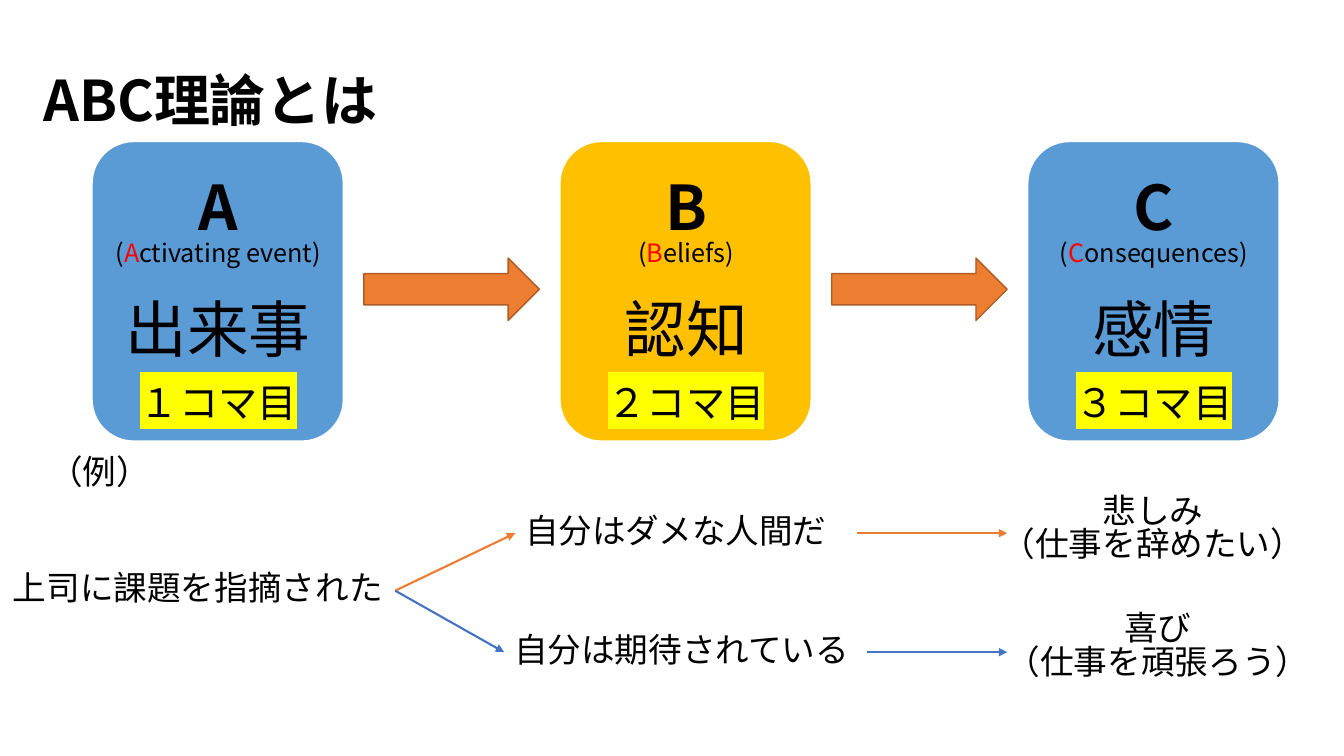
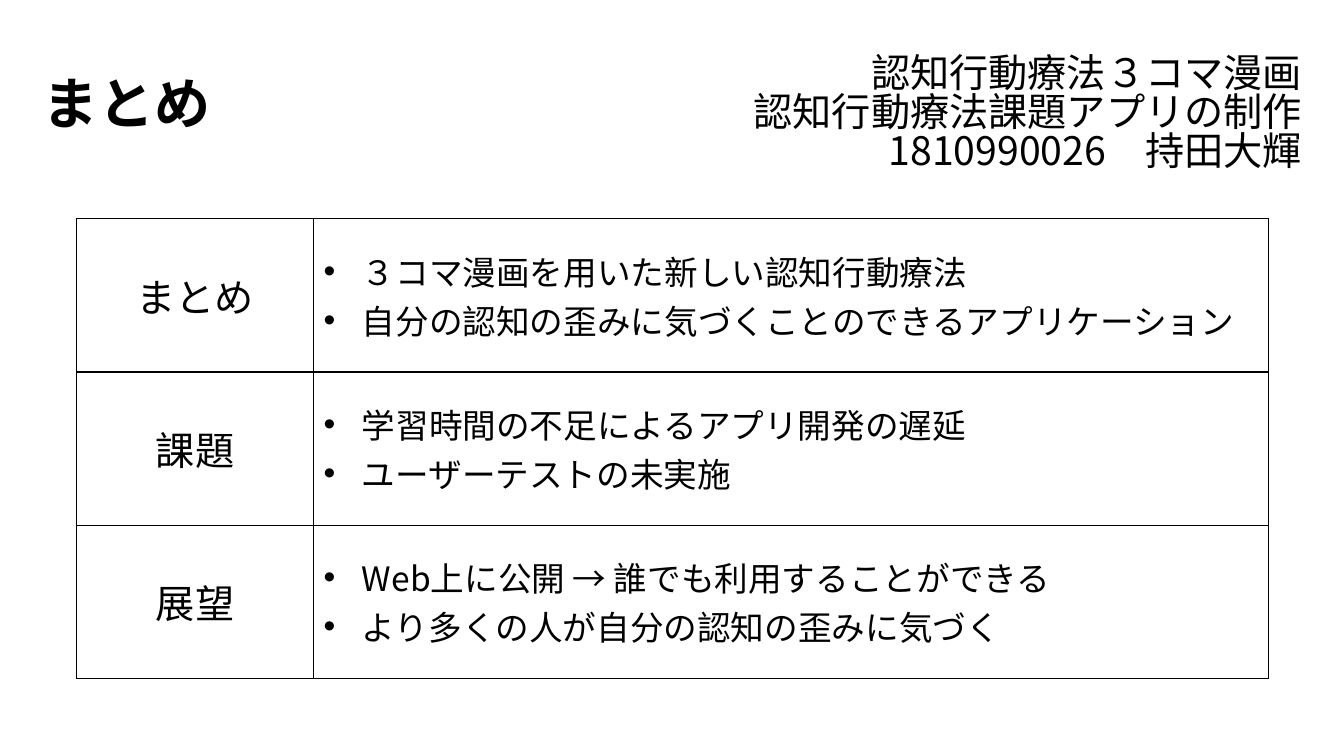
from lxml import etree
from pptx import Presentation
from pptx.dml.color import RGBColor
from pptx.enum.shapes import MSO_CONNECTOR, MSO_SHAPE
from pptx.enum.text import MSO_ANCHOR, PP_ALIGN
from pptx.oxml.ns import qn
from pptx.util import Inches, Pt

LEFT, CENTER, RIGHT = PP_ALIGN.LEFT, PP_ALIGN.CENTER, PP_ALIGN.RIGHT
MIDDLE = MSO_ANCHOR.MIDDLE
STRAIGHT = MSO_CONNECTOR.STRAIGHT
ROUND_RECT, ARROW = MSO_SHAPE.ROUNDED_RECTANGLE, MSO_SHAPE.RIGHT_ARROW
FONT = "Noto Sans CJK JP"
BLACK, WHITE, RED, YELLOW = "000000", "FFFFFF", "FF0000", "FFFF00"
ORANGE, DARK_ORANGE, BLUE = "ED7D31", "AF5C24", "4472C4"
LIGHT_BLUE, GOLD = "5B9BD5", "FFC000"
TITLE_SIZE, LARGE, MEDIUM, BODY, SMALL = 40, 44, 28, 24, 18
LINE_SPACING = 0.83
FIRST_LINE_DROP = 0.1


def rgb(value):
    """Turn a hex string into a colour."""
    return RGBColor.from_string(value)


def add_node(parent, tag, **attrs):
    """Append one drawing element."""
    return etree.SubElement(parent, qn(tag), {k: str(v) for k, v in attrs.items()})


class Deck:
    """Hold the shared style and the slide being built."""

    def __init__(self):
        """Start a wide presentation."""
        self.prs = Presentation()
        self.prs.slide_width, self.prs.slide_height = Inches(13.33), Inches(7.5)
        self.s = None

    def slide(self, title, left, top):
        """Add a slide with its title."""
        self.s = self.prs.slides.add_slide(self.prs.slide_layouts[5])
        sp = self.s.shapes.title
        self.place(sp, left, top, 11.5, 1.45)
        tf = sp.text_frame
        tf.word_wrap, tf.vertical_anchor = True, MIDDLE
        self.fill_text(tf, [[(title, {"size": TITLE_SIZE, "bold": True})]], LEFT,
                       LINE_SPACING)

    def place(self, sp, left, top, width, height):
        """Set the position and size of a shape."""
        box = {"left": left, "top": top, "width": width, "height": height}
        for name, value in box.items():
            setattr(sp, name, Inches(value))

    def add_run(self, p, text, color=BLACK, highlight=None, **formats):
        """Add a formatted run to a paragraph."""
        r = p.add_run()
        r.text = text
        formats["size"] = Pt(formats["size"])
        for name, value in formats.items():
            setattr(r.font, name, value)
        r.font.color.rgb = rgb(color)
        r_pr = r._r.get_or_add_rPr()
        if highlight:
            add_node(add_node(r_pr, "a:highlight"), "a:srgbClr", val=highlight)
        r.font.name = FONT
        add_node(r_pr, "a:ea", typeface=FONT)

    def fill_text(self, tf, lines, align, spacing=None, bullet=False):
        """Fill a text frame with lines of (text, formats) runs."""
        for i, line in enumerate(lines):
            p = tf.add_paragraph() if i else tf.paragraphs[0]
            p.alignment, p.line_spacing = align, spacing
            if bullet:
                p_pr = p._p.get_or_add_pPr()
                indent = Inches(0.38)
                p_pr.set("marL", str(indent))
                p_pr.set("indent", str(-indent))
                add_node(p_pr, "a:buFont", typeface="Arial")
                add_node(p_pr, "a:buChar", char="•")
            for text, formats in line:
                self.add_run(p, text, **formats)

    def text(self, box, lines, align=LEFT):
        """Add a text box whose lines are lists of runs."""
        sp = self.s.shapes.add_textbox(*map(Inches, box))
        tf = sp.text_frame
        tf.word_wrap = True
        drop = FIRST_LINE_DROP * lines[0][0][1]["size"] / 72
        tf.margin_top = Inches(0.05 + drop)
        self.fill_text(tf, lines, align, LINE_SPACING)
        return sp

    def plain(self, box, texts, size=BODY, align=LEFT, **formats):
        """Add a text box in which each line is one run."""
        return self.text(box, [[(t, dict(formats, size=size))] for t in texts], align)

    def shape(self, kind, box, fill, line, width):
        """Add a filled preset shape."""
        sp = self.s.shapes.add_shape(kind, *map(Inches, box))
        sp.shadow.inherit = False
        sp.fill.solid()
        sp.fill.fore_color.rgb = rgb(fill)
        sp.line.color.rgb, sp.line.width = rgb(line), Pt(width)

    def arrow(self, start, color, end=None, point=(0, 0)):
        """Draw an arrow from a box's right side to a box or a point."""
        c = self.s.shapes.add_connector(STRAIGHT, 0, 0, *map(Inches, point))
        c.begin_connect(start, 3)
        if end is not None:
            c.end_connect(end, 1)
        c.line.color.rgb, c.line.width = rgb(color), Pt(1.5)
        sp_pr = c._element.spPr
        add_node(sp_pr.find(qn("a:ln")), "a:tailEnd", type="triangle")
        add_node(sp_pr, "a:effectLst")

    def cell(self, cell, texts, size, align, bullet):
        """Fill a bordered table cell."""
        tc_pr = cell._tc.get_or_add_tcPr()
        for side in ("a:lnL", "a:lnR", "a:lnT", "a:lnB"):
            ln = add_node(tc_pr, side, w=Pt(1))
            add_node(add_node(ln, "a:solidFill"), "a:srgbClr", val=BLACK)
        cell.fill.solid()
        cell.fill.fore_color.rgb = rgb(WHITE)
        cell.vertical_anchor = MIDDLE
        lines = [[(t, {"size": size})] for t in texts]
        self.fill_text(cell.text_frame, lines, align, bullet=bullet)

    def table(self, box, widths, rows):
        """Add a table of headings and bullet lists."""
        frame = self.s.shapes.add_table(len(rows), 2, *map(Inches, box))
        table = frame.table
        table.first_row = table.horz_banding = False
        for column, width in zip(table.columns, widths):
            column.width = Inches(width)
        for i, (heading, points) in enumerate(rows):
            self.cell(table.cell(i, 0), [heading], MEDIUM, CENTER, False)
            self.cell(table.cell(i, 1), points, BODY, LEFT, True)


def theory_slide(deck):
    """Build the ABC theory diagram."""
    deck.slide("ABC理論とは", 0.33, 0.31)
    cards = [
        ("A", "ctivating event)", "出来事", "１コマ目", LIGHT_BLUE),
        ("B", "eliefs)", "認知", "２コマ目", GOLD),
        ("C", "onsequences)", "感情", "３コマ目", LIGHT_BLUE),
    ]
    pitch = 4.64
    for i, (letter, rest, meaning, frame, fill) in enumerate(cards):
        x = 0.91 + i * pitch
        deck.shape(ROUND_RECT, (x, 1.4, 2.5, 2.98), fill, WHITE, 1.5)
        small = {"size": SMALL}
        deck.text((x + 0.09, 1.69, 2.33, 1.14), [
            [(letter, {"size": LARGE, "bold": True})],
            [("(", small), (letter, {"size": SMALL, "color": RED}), (rest, small)],
        ], CENTER)
        deck.plain((x + 0.09, 2.9, 2.33, 0.84), [meaning], LARGE, CENTER)
        deck.plain((x + 0.09, 3.74, 2.33, 0.57), [frame], MEDIUM, CENTER,
                   highlight=YELLOW)
        if i < len(cards) - 1:
            deck.shape(ARROW, (x + 2.7, 2.56, 1.74, 0.62), ORANGE, DARK_ORANGE, 1)

    deck.plain((0.39, 4.46, 1.23, 0.5), ["（例）"])
    event = deck.plain((0.03, 5.61, 3.89, 0.5), ["上司に課題を指摘された"])
    branches = [
        ((5.11, 5.04, 3.39, 0.5), "自分はダメな人間だ",
         (9.74, 4.84, 3.39, 0.91), ["悲しみ", "（仕事を辞めたい）"], ORANGE),
        ((5, 6.22, 3.6, 0.5), "自分は期待されている",
         (9.79, 6.01, 3.39, 0.91), ["喜び", "（仕事を頑張ろう）"], BLUE),
    ]
    for belief_box, thought, feeling_box, feeling, color in branches:
        belief = deck.plain(belief_box, [thought])
        deck.plain(feeling_box, feeling, align=CENTER)
        deck.arrow(event, color, end=belief)
        deck.arrow(belief, color, point=(9.99, belief_box[1] + belief_box[3] / 2))


def summary_slide(deck):
    """Build the summary table."""
    deck.slide("まとめ", 0.32, 0.34)
    deck.table((0.76, 2.17, 11.82, 4.56), (2.35, 9.47), [
        ("まとめ", ["３コマ漫画を用いた新しい認知行動療法",
                 "自分の認知の歪みに気づくことのできるアプリケーション"]),
        ("課題", ["学習時間の不足によるアプリ開発の遅延",
                "ユーザーテストの未実施"]),
        ("展望", ["Web上に公開 → 誰でも利用することができる",
                "より多くの人が自分の認知の歪みに気づく"]),
    ])
    deck.plain((7.23, 0.47, 5.78, 1.51), [
        "認知行動療法３コマ漫画",
        "認知行動療法課題アプリの制作",
        "1810990026　持田大輝",
    ], MEDIUM, RIGHT)


def main():
    """Build and save the presentation."""
    deck = Deck()
    theory_slide(deck)
    summary_slide(deck)
    deck.prs.save("out.pptx")


if __name__ == "__main__":
    main()
